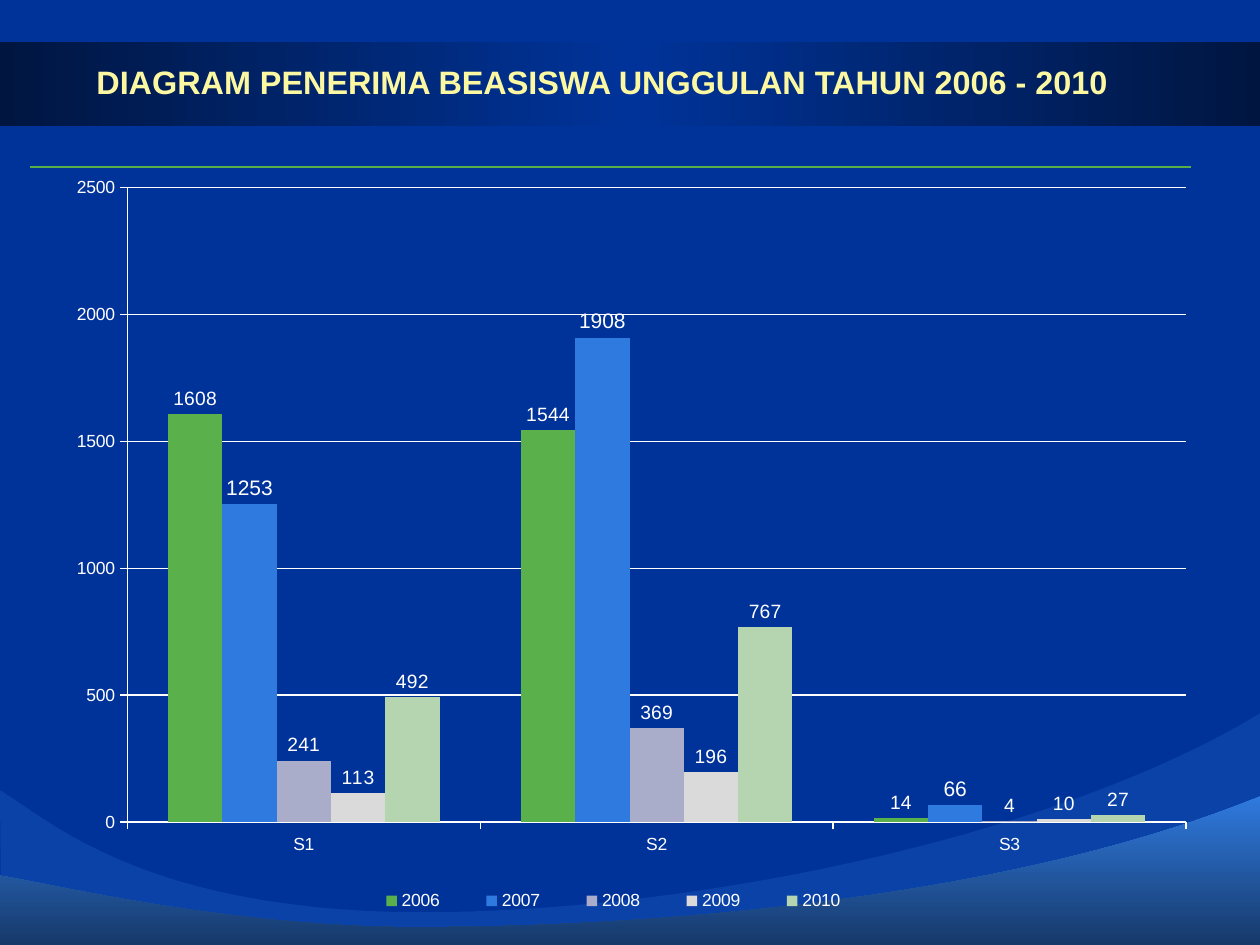
import copy
from dataclasses import dataclass

import lxml.etree
import pptx
import pptx.chart.data
import pptx.dml.color
import pptx.enum.chart
import pptx.enum.shapes
import pptx.enum.text
import pptx.oxml.ns
import pptx.util

Cm, Pt = pptx.util.Cm, pptx.util.Pt
RGB = pptx.dml.color.RGBColor.from_string
qn = pptx.oxml.ns.qn


@dataclass(frozen=True)
class Theme:
    font: str = "Arial"
    background: str = "003399"
    band_edge: str = "001641"
    wave: str = "2F7ADF"
    wave_dark: str = "163868"
    title: str = "FCF8A2"
    rule: str = "56B047"
    chart_text: str = "FFFFFF"
    title_size: float = 18.5
    axis_size: float = 10


theme = Theme()


def set_gradient(shape, colors, angle):
    """Fill a shape with evenly spaced gradient stops."""
    shape.fill.gradient()
    shape.fill.gradient_angle = angle
    stop_list = shape._element.spPr.find(qn("a:gradFill")).find(qn("a:gsLst"))
    while len(stop_list) < len(colors):
        stop_list.append(copy.deepcopy(stop_list[0]))
    for index, (stop, color) in enumerate(zip(shape.fill.gradient_stops, colors)):
        stop.position = index / (len(colors) - 1)
        stop.color.rgb = RGB(color)


def add_wave(start, curve_points, corners):
    """Draw a closed outline, in cm, whose top edge is a chain of Bezier curves."""
    points = [(x * 1000, y * 1000) for x, y in [start, *curve_points, *corners]]
    builder = slide.shapes.build_freeform(*points[0], scale=Cm(0.001))
    builder.add_line_segments(points[1:], close=True)
    shape = builder.convert_to_shape()
    # Every three straight segments of the top edge become one curve
    segments = list(shape._element.spPr.iter(qn("a:lnTo")))[:len(curve_points)]
    for index in range(0, len(segments), 3):
        curve = lxml.etree.Element(qn("a:cubicBezTo"))
        segments[index].addprevious(curve)
        for segment in segments[index:index + 3]:
            curve.append(segment[0])
            segment.getparent().remove(segment)
    shape.shadow.inherit = False
    shape.line.fill.background()
    return shape


presentation = pptx.Presentation()
presentation.slide_width, presentation.slide_height = Cm(25.4), Cm(19.05)
slide = presentation.slides.add_slide(presentation.slide_layouts[5])
slide.background.fill.solid()
slide.background.fill.fore_color.rgb = RGB(theme.background)

# Title band
band = slide.shapes.add_shape(pptx.enum.shapes.MSO_SHAPE.RECTANGLE,
                              Cm(0), Cm(0.84), Cm(25.4), Cm(1.7))
band.shadow.inherit = False
band.line.fill.background()
set_gradient(band, [theme.band_edge, theme.background, theme.band_edge], 0)

# Waves along the bottom edge
back_wave = add_wave(
    (0, 15.93),
    [(1.02, 16.54), (2.95, 18.42), (8.71, 18.39),
     (14.48, 18.34), (21.56, 16.74), (25.45, 14.35)],
    [(25.43, 19.08), (0.03, 19.08)])
back_wave.fill.solid()
back_wave.fill.fore_color.rgb = RGB(theme.wave)
wave_color = back_wave._element.spPr.find(qn("a:solidFill"))[0]
lxml.etree.SubElement(wave_color, qn("a:alpha")).set("val", "22000")

front_wave = add_wave(
    (-0.03, 17.65),
    [(0.91, 17.78), (4.72, 18.75), (8.79, 18.69),
     (12.85, 18.67), (20.24, 18.19), (25.4, 16.05)],
    [(25.4, 19.1), (0, 19.1)])
set_gradient(front_wave, [theme.wave, theme.wave_dark], 270)

# Chart data: name, values, colour, label size
series_rows = [
    ("2006", (1608, 1544, 14), "5AB14B", 11),
    ("2007", (1253, 1908, 66), "2F7ADF", 12),
    ("2008", (241, 369, 4), "AAADCA", 11),
    ("2009", (113, 196, 10), "DADADA", 11),
    ("2010", (492, 767, 27), "B5D5B1", 11),
]
chart_data = pptx.chart.data.CategoryChartData()
chart_data.categories = ["S1", "S2", "S3"]
for name, values, color, label_size in series_rows:
    chart_data.add_series(name, values)
chart = slide.shapes.add_chart(pptx.enum.chart.XL_CHART_TYPE.COLUMN_CLUSTERED,
                               Cm(0.43), Cm(3.18), Cm(24.56), Cm(15.87), chart_data).chart
chart.has_title = False
chart.font.name = theme.font
chart.font.size = Pt(theme.axis_size)
chart.font.color.rgb = RGB(theme.chart_text)

# Columns and their labels
plot = chart.plots[0]
plot.gap_width, plot.overlap = 150, 0
plot.vary_by_categories = False
for series, (name, values, color, label_size) in zip(plot.series, series_rows):
    series.format.fill.solid()
    series.format.fill.fore_color.rgb = RGB(color)
    labels = series.data_labels
    labels.show_value = True
    labels.position = pptx.enum.chart.XL_LABEL_POSITION.OUTSIDE_END
    labels.font.name = theme.font
    labels.font.size = Pt(label_size)
    labels.font.color.rgb = RGB(theme.chart_text)

# Axes and legend
value_axis = chart.value_axis
value_axis.minimum_scale, value_axis.maximum_scale, value_axis.major_unit = 0, 2500, 500
value_axis.has_major_gridlines = True
for axis in (chart.category_axis, value_axis):
    axis.major_tick_mark = pptx.enum.chart.XL_TICK_MARK.OUTSIDE
for line in (chart.category_axis.format.line, value_axis.format.line,
             value_axis.major_gridlines.format.line):
    line.color.rgb = RGB(theme.chart_text)
    line.width = Pt(0.75)
chart.has_legend = True
chart.legend.position = pptx.enum.chart.XL_LEGEND_POSITION.BOTTOM
chart.legend.include_in_layout = False

# Fixed places for plot area and legend, in percent of the chart
plot_area = chart._chartSpace.chart.plotArea
legend = chart.legend._element
for element, target, box in ((plot_area, "inner", (8.7, 3.8, 86.9, 80.6)),
                             (legend, None, (26.6, 91.9, 44, 5))):
    layout = element.find(qn("c:layout"))
    if layout is None:
        layout = lxml.etree.Element(qn("c:layout"))
        element.insert(0 if target else 1, layout)
    manual = lxml.etree.SubElement(layout, qn("c:manualLayout"))
    entries = [("layoutTarget", target)] if target else []
    entries += [("xMode", "edge"), ("yMode", "edge")]
    entries += [(side, percent / 100) for side, percent in zip("xywh", box)]
    for tag, value in entries:
        lxml.etree.SubElement(manual, qn(f"c:{tag}")).set("val", str(value))

# Title, moved in front of the band
title = slide.shapes.title
slide.shapes._spTree.append(title._element)
title.left, title.top, title.width, title.height = Cm(1.69), Cm(0.86), Cm(22.02), Cm(1.57)
title.text_frame.text = "DIAGRAM PENERIMA BEASISWA UNGGULAN TAHUN 2006 - 2010"
title.text_frame.auto_size = pptx.enum.text.MSO_AUTO_SIZE.NONE
title.text_frame.vertical_anchor = pptx.enum.text.MSO_ANCHOR.MIDDLE
paragraph = title.text_frame.paragraphs[0]
paragraph.alignment = pptx.enum.text.PP_ALIGN.LEFT
paragraph.font.name = theme.font
paragraph.font.size = Pt(theme.title_size)
paragraph.font.bold = True
paragraph.font.color.rgb = RGB(theme.title)

# Rule under the title
rule = slide.shapes.add_connector(pptx.enum.shapes.MSO_CONNECTOR.STRAIGHT,
                                  Cm(0.6), Cm(3.37), Cm(24), Cm(3.37))
rule.line.color.rgb = RGB(theme.rule)
rule.line.width = Pt(1.25)
lxml.etree.SubElement(rule._element.spPr, qn("a:effectLst"))

presentation.save("out.pptx")
